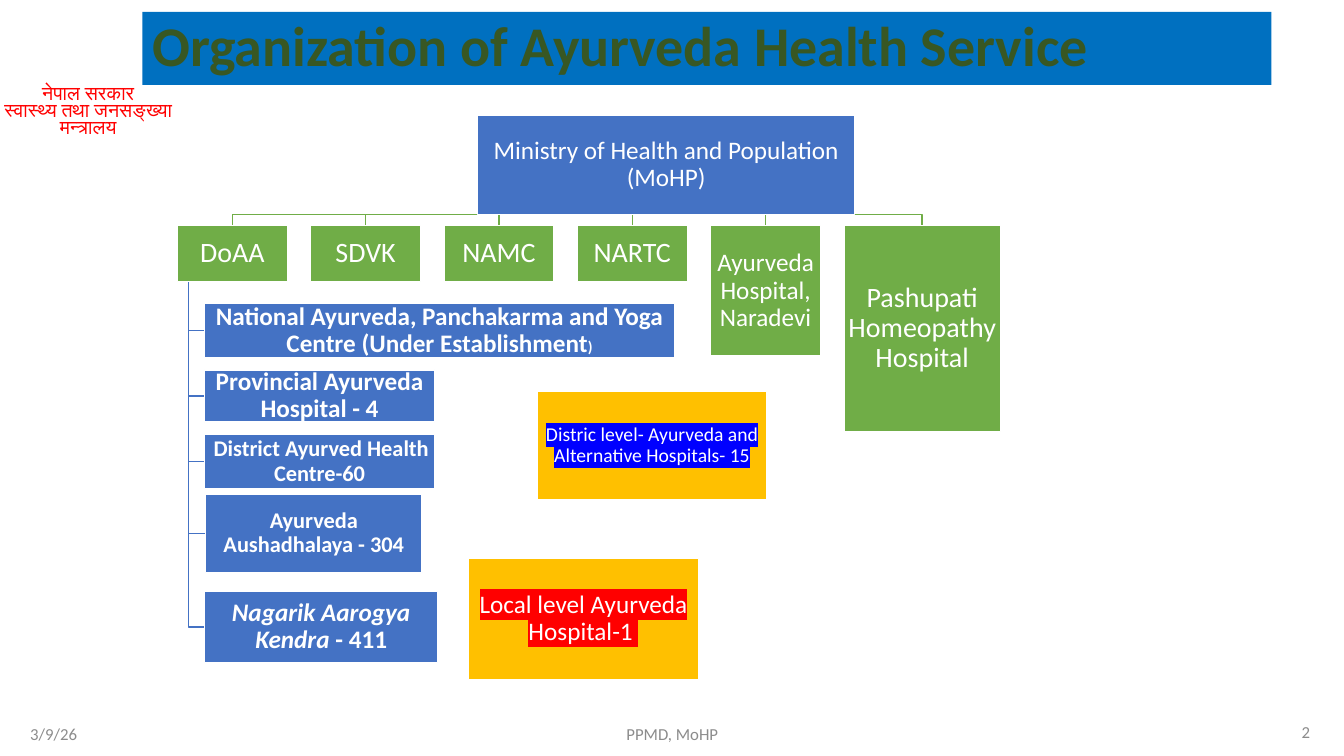
import pptx
import pptx.dml.color
import pptx.enum.shapes
import pptx.enum.text
import pptx.oxml
import pptx.oxml.ns
import pptx.util

Cm = pptx.util.Cm
Pt = pptx.util.Pt
RGBColor = pptx.dml.color.RGBColor
PP_ALIGN = pptx.enum.text.PP_ALIGN
MSO_SHAPE = pptx.enum.shapes.MSO_SHAPE

WHITE = RGBColor(0xFF, 0xFF, 0xFF)
BLUE = RGBColor(0x44, 0x72, 0xC4)
GREEN = RGBColor(0x70, 0xAD, 0x47)
AMBER = RGBColor(0xFF, 0xC0, 0x00)
TITLE_BLUE = RGBColor(0x00, 0x70, 0xC0)
TITLE_GREEN = RGBColor(0x38, 0x57, 0x23)
RED = RGBColor(0xFF, 0x00, 0x00)
MARK_BLUE = RGBColor(0x00, 0x00, 0xFF)
GREY = RGBColor(0x8C, 0x8C, 0x8C)

deck = pptx.Presentation()
deck.slide_width = Cm(33.87)
deck.slide_height = Cm(19.05)
page = deck.slides.add_slide(deck.slide_layouts[6])


def add_unit(left, top, width, height, fill, spans):
    """Add an organization box; each span is (text, size, bold, italic)."""
    box = page.shapes.add_shape(MSO_SHAPE.RECTANGLE, Cm(left), Cm(top), Cm(width), Cm(height))
    box.shadow.inherit = False
    box.fill.solid()
    box.fill.fore_color.rgb = fill
    box.line.color.rgb = WHITE
    box.line.width = Pt(1)
    frame = box.text_frame
    frame.word_wrap = True
    frame.margin_left = frame.margin_right = Cm(0.03)
    frame.margin_top = frame.margin_bottom = Cm(0.03)
    para = frame.paragraphs[0]
    para.alignment = PP_ALIGN.CENTER
    para.line_spacing = 0.9
    for text, size, bold, italic in spans:
        span = para.add_run()
        span.text = text
        span.font.name = "Calibri"
        span.font.size = Pt(size)
        span.font.bold = bold
        span.font.italic = italic
        span.font.color.rgb = WHITE
    return box


def add_elbow(points, color):
    (start_x, start_y), *rest = [(Cm(x), Cm(y)) for x, y in points]
    builder = page.shapes.build_freeform(start_x, start_y)
    builder.add_line_segments(rest, close=False)
    elbow = builder.convert_to_shape()
    elbow.shadow.inherit = False
    elbow.fill.background()
    elbow.line.color.rgb = color
    elbow.line.width = Pt(1)


# Government name
ministry = page.shapes.add_shape(
    MSO_SHAPE.ROUNDED_RECTANGLE, Cm(-0.3), Cm(2.29), Cm(5.05), Cm(1.12))
ministry.shadow.inherit = False
ministry.fill.background()
ministry.line.fill.background()
ministry.text_frame.word_wrap = True
ministry.text_frame.text = "नेपाल सरकार\nस्वास्थ्य तथा जनसङ्ख्या मन्त्रालय"
for para in ministry.text_frame.paragraphs:
    para.alignment = PP_ALIGN.CENTER
    para.line_spacing = Pt(12)
    para.runs[0].font.name = "Lato"
    para.runs[0].font.size = Pt(14)
    para.runs[0].font.color.rgb = RED

# Title
title = page.shapes.add_shape(MSO_SHAPE.RECTANGLE, Cm(3.59), Cm(0.3), Cm(28.45), Cm(1.84))
title.shadow.inherit = False
title.fill.solid()
title.fill.fore_color.rgb = TITLE_BLUE
title.line.fill.background()
title.text_frame.word_wrap = True
title.text_frame.text = "Organization of Ayurveda Health Service"
para = title.text_frame.paragraphs[0]
para.alignment = PP_ALIGN.LEFT
para.line_spacing = 0.9
para.runs[0].font.name = "Calibri"
para.runs[0].font.size = Pt(40)
para.runs[0].font.bold = True
para.runs[0].font.color.rgb = TITLE_GREEN

# Footer
footers = [
    ("3/9/26", 0.51, 18.24, 7.62, PP_ALIGN.LEFT),
    ("PPMD, MoHP", 11.23, 18.24, 11.43, PP_ALIGN.CENTER),
    ("2", 25.65, 18.19, 7.62, PP_ALIGN.RIGHT),
]
for text, left, top, width, alignment in footers:
    footer = page.shapes.add_textbox(Cm(left), Cm(top), Cm(width), Cm(0.51))
    footer.text_frame.word_wrap = True
    footer.text_frame.vertical_anchor = pptx.enum.text.MSO_ANCHOR.MIDDLE
    footer.text_frame.text = text
    para = footer.text_frame.paragraphs[0]
    para.alignment = alignment
    para.runs[0].font.name = "Calibri"
    para.runs[0].font.size = Pt(12)
    para.runs[0].font.color.rgb = GREY

# Central units: text, size, width, height
UNIT_LEFT, UNIT_TOP, UNIT_PITCH = 4.47, 5.69, 3.36
units = [
    ("DoAA", 20, 2.77, 1.4),
    ("SDVK", 20, 2.77, 1.4),
    ("NAMC", 20, 2.77, 1.4),
    ("NARTC", 20, 2.77, 1.4),
    ("Ayurveda Hospital, Naradevi", 18, 2.77, 3.28),
    ("Pashupati Homeopathy Hospital", 20, 3.94, 5.18),
]
# Units below DoAA: left, top, width, height, spans
branches = [
    (5.16, 7.65, 11.84, 1.37, [
        ("National Ayurveda, Panchakarma and Yoga Centre (Under Establishment", 18, True, False),
        (")", 11, True, False)]),
    (5.16, 9.32, 5.79, 1.32, [("Provincial Ayurveda Hospital - 4", 18, True, False)]),
    (5.16, 10.95, 5.79, 1.37, [
        (" ", 11, True, False),
        ("District Ayurved Health Centre-60", 16, True, False)]),
    (5.18, 12.45, 5.46, 1.98, [("Ayurveda Aushadhalaya - 304", 16, True, False)]),
    (5.16, 14.91, 5.87, 1.78, [
        ("Nagarik Aarogya Kendra ", 18, True, True),
        ("- 411", 18, True, False)]),
]

# Elbow lines lie behind the boxes
ROOT_X, ROOT_BOTTOM = 16.79, 5.41
SPINE_X, SPINE_TOP = 4.75, 7.07
for column, (text, size, width, height) in enumerate(units):
    center = UNIT_LEFT + column * UNIT_PITCH + width / 2
    add_elbow([(ROOT_X, ROOT_BOTTOM), (center, ROOT_BOTTOM), (center, UNIT_TOP)], GREEN)
for left, top, width, height, spans in branches:
    middle = top + height / 2
    add_elbow([(SPINE_X, SPINE_TOP), (SPINE_X, middle), (left, middle)], BLUE)

add_unit(12.04, 2.9, 9.5, 2.51, BLUE,
         [("Ministry of Health and Population (MoHP)", 18, False, False)])
for column, (text, size, width, height) in enumerate(units):
    add_unit(UNIT_LEFT + column * UNIT_PITCH, UNIT_TOP, width, height, GREEN,
             [(text, size, False, False)])
for left, top, width, height, spans in branches:
    add_unit(left, top, width, height, BLUE, spans)

# Hospitals with highlighted text
hospitals = [
    ("Distric level- Ayurveda and Alternative Hospitals- 15", 14, 13.54, 9.86, 2.74, MARK_BLUE),
    ("Local level Ayurveda Hospital-1 ", 18, 11.81, 14.07, 3.05, RED),
]
for text, size, left, top, height, mark in hospitals:
    box = add_unit(left, top, 5.79, height, AMBER, [(text, size, False, False)])
    fill = box.text_frame.paragraphs[0].runs[0].font._element.find(
        pptx.oxml.ns.qn("a:solidFill"))
    fill.addnext(pptx.oxml.parse_xml(
        f'<a:highlight {pptx.oxml.ns.nsdecls("a")}><a:srgbClr val="{mark}"/></a:highlight>'))

deck.save("out.pptx")
